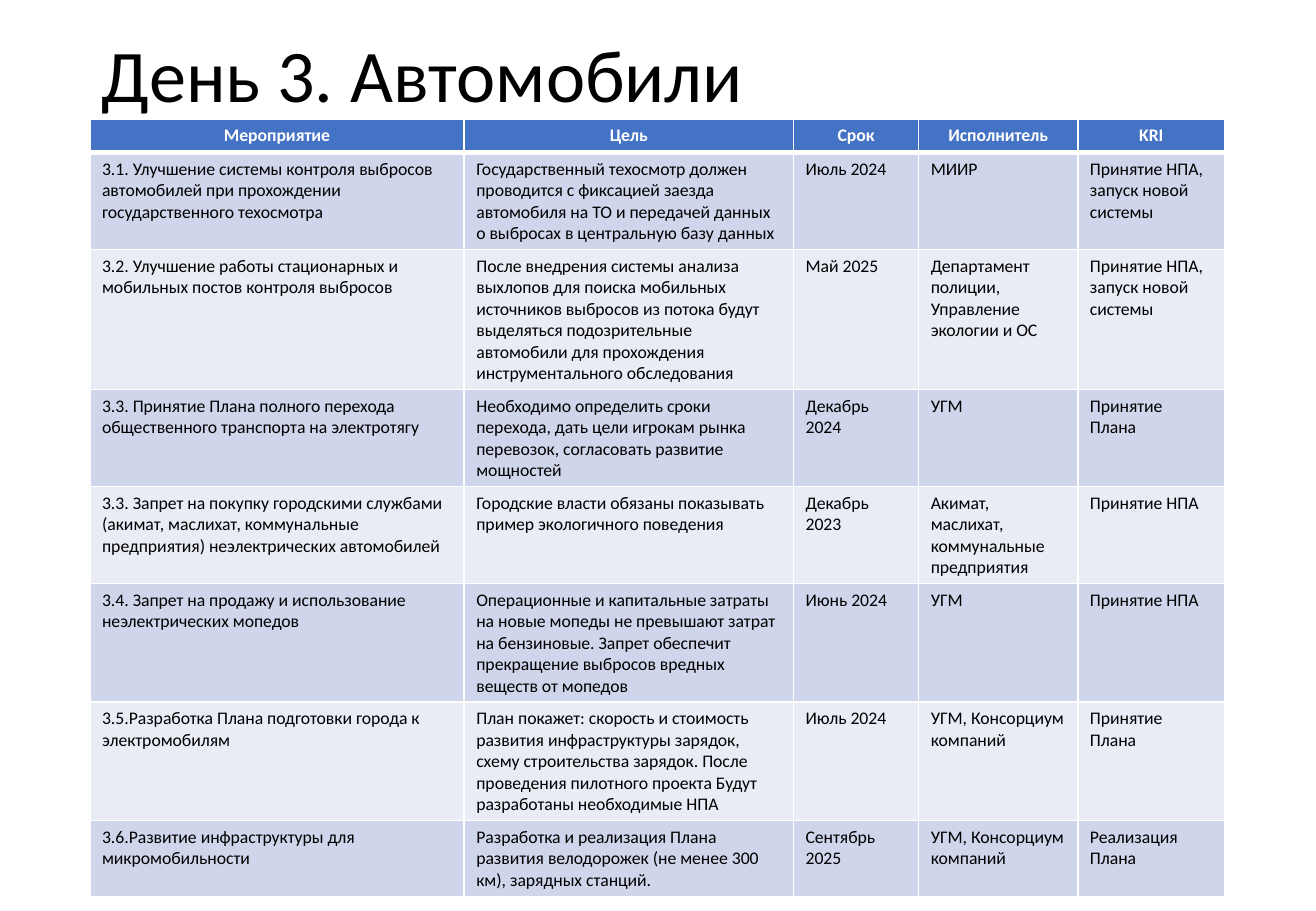
import pptx
import pptx.util
import pptx.dml.color
import pptx.enum.text
import pptx.oxml
import pptx.oxml.ns

Inches, Pt = pptx.util.Inches, pptx.util.Pt
ALIGN = pptx.enum.text.PP_ALIGN

TITLE = "День 3. Автомобили"
HEAD = ["Мероприятие", "Цель", "Срок", "Исполнитель", "KRI"]
PLAN = [
    ("3.1. Улучшение системы контроля выбросов автомобилей при прохождении государственного техосмотра",
     "Государственный техосмотр должен проводится с фиксацией заезда автомобиля на ТО и передачей данных "
     "о выбросах в центральную базу данных",
     "Июль 2024", "МИИР", "Принятие НПА, запуск новой системы"),
    ("3.2. Улучшение работы стационарных и мобильных постов контроля выбросов",
     "После внедрения системы анализа выхлопов для поиска мобильных источников выбросов из потока будут "
     "выделяться подозрительные автомобили для прохождения инструментального обследования",
     "Май 2025", "Департамент полиции, Управление экологии и ОС",
     "Принятие НПА, запуск новой системы"),
    ("3.3. Принятие Плана полного перехода общественного транспорта на электротягу",
     "Необходимо определить сроки перехода, дать цели игрокам рынка перевозок, "
     "согласовать развитие мощностей",
     "Декабрь 2024", "УГМ", "Принятие Плана"),
    ("3.3. Запрет на покупку городскими службами (акимат, маслихат, коммунальные предприятия) "
     "неэлектрических автомобилей",
     "Городские власти обязаны показывать пример экологичного поведения",
     "Декабрь 2023", "Акимат, маслихат, коммунальные предприятия", "Принятие НПА"),
    ("3.4. Запрет на продажу и использование неэлектрических мопедов",
     "Операционные и капитальные затраты на новые мопеды не превышают затрат на бензиновые. "
     "Запрет обеспечит прекращение выбросов вредных веществ от мопедов",
     "Июнь 2024", "УГМ", "Принятие НПА"),
    ("3.5.Разработка Плана подготовки города к электромобилям",
     "План покажет: скорость и стоимость развития инфраструктуры зарядок, схему строительства зарядок. "
     "После проведения пилотного проекта Будут разработаны необходимые НПА",
     "Июль 2024", "УГМ, Консорциум компаний", "Принятие Плана"),
    ("3.6.Развитие инфраструктуры для микромобильности",
     "Разработка и реализация Плана развития велодорожек (не менее 300 км), зарядных станций.",
     "Сентябрь 2025", "УГМ, Консорциум компаний", "Реализация Плана"),
]
COLS = [3.08, 2.71, 1.03, 1.31, 1.21]
LINES = [1, 4, 6, 4, 4, 5, 5, 3]  # text lines in each row
LEFT, TOP, WIDTH = 0.74, 0.98, sum(COLS)
PAD, LINE = 0.1, 0.175

THEME = {
    "font": "Calibri", "title": 44, "body": 10.5,
    "ink": "000000", "paper": "FFFFFF", "head": "4472C4",
    "bands": ["CFD5EA", "E9EBF5"], "thin": 1, "thick": 3,
}


def color(code):
    return pptx.dml.color.RGBColor.from_string(code)


def write(frame, text, size, ink, bold=False, align=ALIGN.LEFT):
    par = frame.paragraphs[0]
    par.alignment = align
    run = par.add_run()
    run.text = text
    font = run.font
    font.name, font.size, font.bold = THEME["font"], Pt(size), bold
    font.color.rgb = color(ink)
    return par


def border(cell, side, width):
    line = pptx.oxml.parse_xml(
        f'<a:ln{side} {pptx.oxml.ns.nsdecls("a")} w="{Pt(width)}"><a:solidFill>'
        f'<a:srgbClr val="{THEME["paper"]}"/></a:solidFill></a:ln{side}>')
    cell._tc.get_or_add_tcPr().append(line)


def style(cell, row):
    # Borders come before the fill in the cell properties
    for side in "LRTB":
        thick = (row, side) in ((0, "B"), (1, "T"))
        border(cell, side, THEME["thick" if thick else "thin"])
    cell.fill.solid()
    cell.fill.fore_color.rgb = color(THEME["bands"][(row - 1) % 2] if row else THEME["head"])


def main():
    deck = pptx.Presentation()
    deck.slide_width, deck.slide_height = Inches(10.83), Inches(7.5)
    slide = deck.slides.add_slide(deck.slide_layouts[6])

    # Title
    box = slide.shapes.add_textbox(Inches(LEFT), Inches(0.12), Inches(WIDTH), Inches(1.06))
    frame = box.text_frame
    frame.word_wrap = True
    frame.vertical_anchor = pptx.enum.text.MSO_ANCHOR.MIDDLE
    write(frame, TITLE, THEME["title"], THEME["ink"]).line_spacing = 0.9

    # Table grid
    rows = [HEAD] + PLAN
    highs = [PAD + LINE * count for count in LINES]
    table = slide.shapes.add_table(
        len(rows), len(COLS), Inches(LEFT), Inches(TOP), Inches(WIDTH), Inches(sum(highs))).table
    for col, width in zip(table.columns, COLS):
        col.width = Inches(width)
    for row, high in zip(table.rows, highs):
        row.height = Inches(high)

    # Table cells
    for r, texts in enumerate(rows):
        head = r == 0
        for c, text in enumerate(texts):
            cell = table.cell(r, c)
            style(cell, r)
            write(cell.text_frame, text, THEME["body"], THEME["paper" if head else "ink"],
                  head, ALIGN.CENTER if head else ALIGN.LEFT)

    deck.save("out.pptx")


if __name__ == "__main__":
    main()
